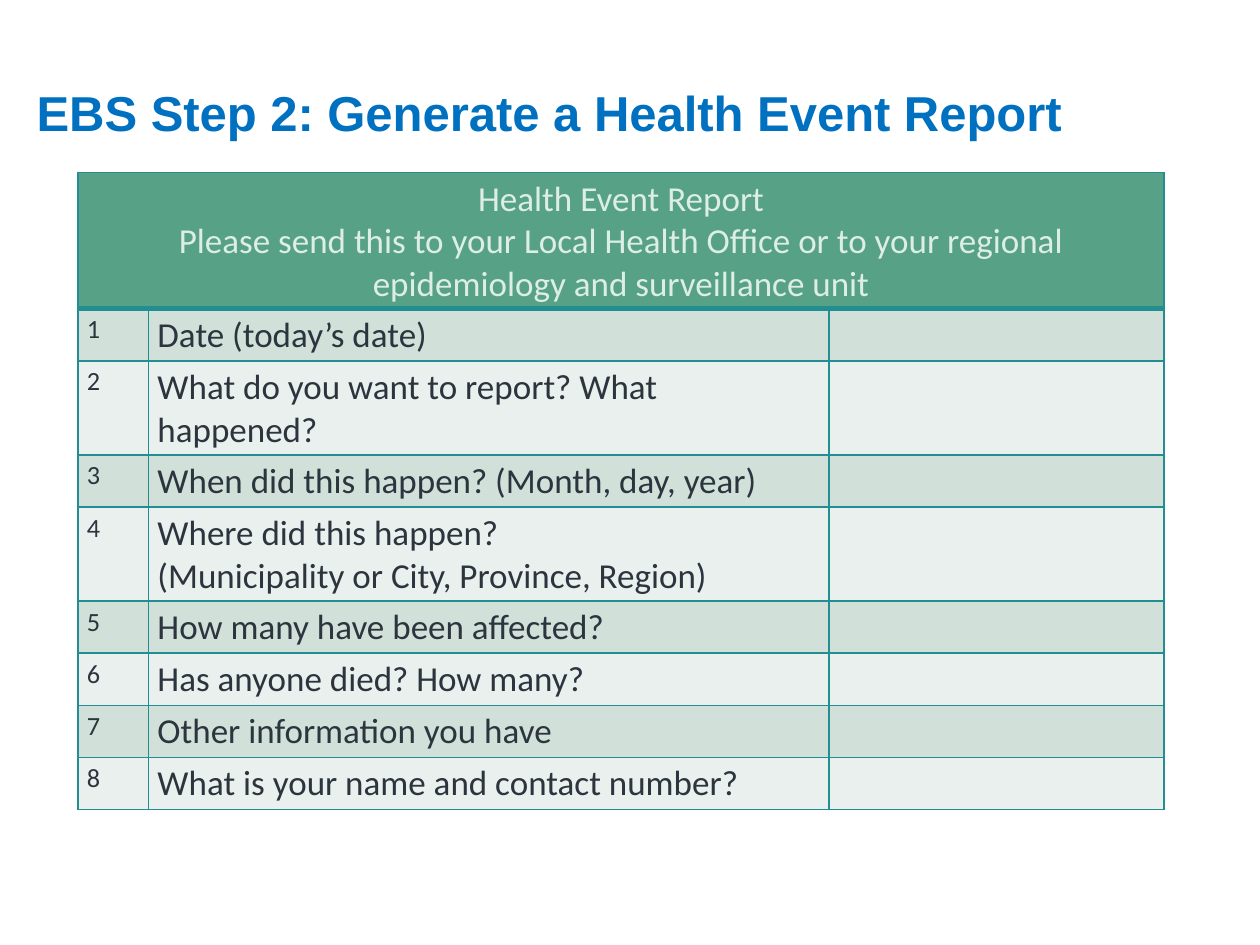
import pptx
import pptx.dml.color
import pptx.enum.text
import pptx.oxml.ns
import pptx.util
from lxml import etree

Inches = pptx.util.Inches
Pt = pptx.util.Pt
CENTER = pptx.enum.text.PP_ALIGN.CENTER
LEFT = pptx.enum.text.PP_ALIGN.LEFT
MIDDLE = pptx.enum.text.MSO_ANCHOR.MIDDLE

COLORS = {
    "title": "0070C0",
    "border": "228E92",
    "header": "57A286",
    "header_text": "DDEDE7",
    "text": "2C343E",
    "odd": "D1E0D9",
    "even": "EAF0ED",
}
HEADER = (
    "Health Event Report\n"
    "Please send this to your Local Health Office or to your regional "
    "epidemiology and surveillance unit"
)
QUESTIONS = [
    "Date (today’s date)",
    "What do you want to report? What happened?",
    "When did this happen? (Month, day, year)",
    "Where did this happen?\n(Municipality or City, Province, Region)",
    "How many have been affected?",
    "Has anyone died? How many?",
    "Other information you have",
    "What is your name and contact number?",
]


def rgb(name):
    return pptx.dml.color.RGBColor.from_string(COLORS[name])


def write(tf, text, size=20, color="text", font="Calibri", bold=False, align=LEFT):
    for i, line in enumerate(text.split("\n")):
        p = tf.add_paragraph() if i else tf.paragraphs[0]
        p.alignment = align
        r = p.add_run()
        r.text = line
        r.font.name = font
        r.font.size = Pt(size)
        r.font.bold = bold
        r.font.color.rgb = rgb(color)


class Deck:
    """Holds the style and the current slide."""

    def __init__(self, prs):
        self.s = prs.slides.add_slide(prs.slide_layouts[6])
        self.margin_x = Inches(0.07)
        self.margin_y = Inches(0.04)

    def set_margins(self, box):
        box.margin_left = box.margin_right = self.margin_x
        box.margin_top = box.margin_bottom = self.margin_y

    def title(self, text, x, y, w, h):
        sp = self.s.shapes.add_textbox(Inches(x), Inches(y), Inches(w), Inches(h))
        tf = sp.text_frame
        tf.word_wrap = True
        tf.vertical_anchor = MIDDLE
        self.set_margins(tf)
        write(tf, text, size=28, color="title", font="Arial", bold=True)

    def table(self, x, y, w, h, cols, rows):
        sp = self.s.shapes.add_table(
            len(rows), len(cols), Inches(x), Inches(y), Inches(w), Inches(h))
        for col, width in zip(sp.table.columns, cols):
            col.width = Inches(width)
        for row, height in zip(sp.table.rows, rows):
            row.height = Inches(height)
        return sp.table

    def cell(self, cell, fill, text="", bottom=1, **style):
        self.set_margins(cell)
        tc_pr = cell._tc.get_or_add_tcPr()
        for side, width in (("L", 1), ("R", 1), ("T", 1), ("B", bottom)):
            ln = etree.SubElement(
                tc_pr, pptx.oxml.ns.qn(f"a:ln{side}"), w=str(Pt(width)))
            solid = etree.SubElement(ln, pptx.oxml.ns.qn("a:solidFill"))
            etree.SubElement(
                solid, pptx.oxml.ns.qn("a:srgbClr"), val=COLORS["border"])
        cell.fill.solid()
        cell.fill.fore_color.rgb = rgb(fill)
        if text:
            write(cell.text_frame, text, **style)


def main():
    prs = pptx.Presentation()
    prs.slide_width, prs.slide_height = Inches(10), Inches(7.5)
    deck = Deck(prs)
    deck.title("EBS Step 2: Generate a Health Event Report", 0.22, 0.61, 8.59, 0.55)

    heights = [0.97] + [0.57 if "\n" in q else 0.33 for q in QUESTIONS]
    report = deck.table(0.62, 1.37, 8.62, 5.01, [0.56, 5.4, 2.66], heights)
    report.cell(0, 0).merge(report.cell(0, 2))
    for col, text in enumerate([HEADER, "", ""]):
        deck.cell(report.cell(0, col), "header", text, bottom=3,
                  color="header_text", align=CENTER)
    for number, question in enumerate(QUESTIONS, 1):
        fill = "odd" if number % 2 else "even"
        deck.cell(report.cell(number, 0), fill, str(number), size=15)
        deck.cell(report.cell(number, 1), fill, question)
        deck.cell(report.cell(number, 2), fill)
    prs.save("out.pptx")


if __name__ == "__main__":
    main()
